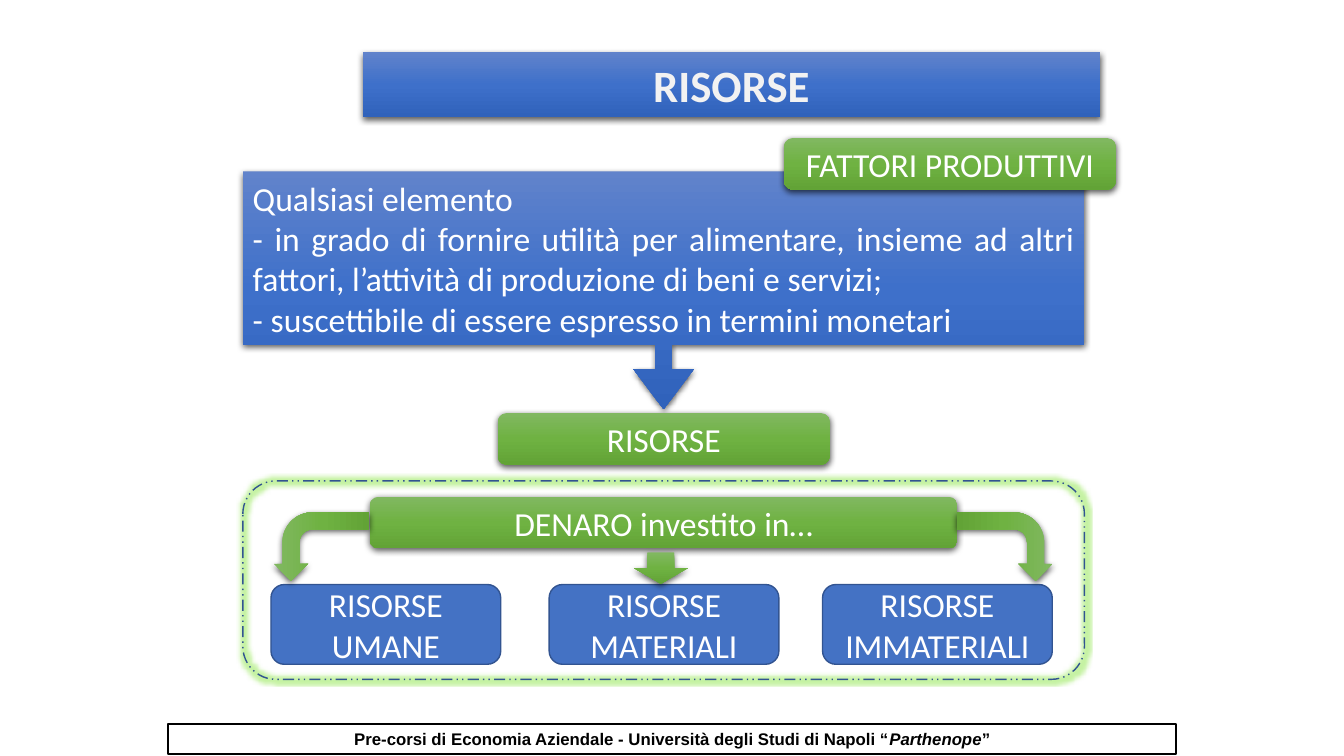
import pptx
import pptx.util
import pptx.dml.color
import pptx.enum.dml
import pptx.enum.shapes
import pptx.enum.text
import pptx.oxml
import pptx.oxml.ns
from lxml import etree

Cm, Pt = pptx.util.Cm, pptx.util.Pt
rgb = pptx.dml.color.RGBColor.from_string
qn = pptx.oxml.ns.qn
KIND = pptx.enum.shapes.MSO_SHAPE
ALIGN = pptx.enum.text.PP_ALIGN
NS = 'xmlns:a="http://schemas.openxmlformats.org/drawingml/2006/main"'

hues = {"white": "FFFFFF", "pale": "F2F2F2", "black": "000000",
        "blue": "4472C4", "edge": "325491", "glow": "70E01A"}
fades = {"blue": ["6183CB", "3E70CA", "3062BB"],
         "green": ["81B861", "6FB242", "62A336"]}

deck = pptx.Presentation()
deck.slide_width, deck.slide_height = Cm(33.87), Cm(19.05)
slide = deck.slides.add_slide(deck.slide_layouts[6])


def draw(kind, box, fade=None, fill=None, edge=None, width=1):
    """Add a shape: a faded one gets a soft shadow, others are flat."""
    shape = slide.shapes.add_shape(kind, *[Cm(n) for n in box])
    shape.shadow.inherit = False
    if edge:
        shape.line.color.rgb = rgb(hues[edge])
        shape.line.width = Pt(width)
    else:
        shape.line.fill.background()
    if fade:
        shape.fill.gradient()
        shape.fill.gradient_angle = 270
        props = shape.element.spPr
        stops = props.find(qn("a:gradFill")).find(qn("a:gsLst"))
        stops.clear()
        for spot, hue in zip((0, 50000, 100000), fades[fade]):
            stop = etree.SubElement(stops, qn("a:gs"), pos=str(spot))
            etree.SubElement(stop, qn("a:srgbClr"), val=hue)
        props.find(qn("a:effectLst")).append(pptx.oxml.parse_xml(
            f'<a:outerShdw {NS} blurRad="57150" dist="19050" dir="5400000" '
            f'algn="ctr" rotWithShape="0"><a:srgbClr val="{hues["black"]}">'
            '<a:alpha val="63000"/></a:srgbClr></a:outerShdw>'))
    elif fill:
        shape.fill.solid()
        shape.fill.fore_color.rgb = rgb(hues[fill])
    else:
        shape.fill.background()
    return shape


def write(shape, *lines, size=24, font="Calibri", hue="white", bold=False,
          align=ALIGN.CENTER, grow=False):
    """Fill a shape with lines; a line is a list of (text, italic) or a text."""
    frame = shape.text_frame
    frame.word_wrap = True
    frame.vertical_anchor = pptx.enum.text.MSO_ANCHOR.MIDDLE
    if grow:
        frame.vertical_anchor = pptx.enum.text.MSO_ANCHOR.TOP
        frame.auto_size = pptx.enum.text.MSO_AUTO_SIZE.SHAPE_TO_FIT_TEXT
    for i, line in enumerate(lines):
        para = frame.paragraphs[0] if i == 0 else frame.add_paragraph()
        para.alignment = align
        for text, slant in [(line, False)] if isinstance(line, str) else line:
            run = para.add_run()
            run.text = text
            run.font.size, run.font.name = Pt(size), font
            run.font.bold, run.font.italic = bold, slant
            run.font.color.rgb = rgb(hues[hue])


# Title
title = draw(KIND.RECTANGLE, (9.14, 1.32, 18.59, 1.63), fade="blue")
write(title, "RISORSE", size=32, hue="pale", bold=True, grow=True)

# Definition
note = draw(KIND.DOWN_ARROW_CALLOUT, (6.12, 4.32, 21.21, 5.99), fade="blue")
for i, part in enumerate((0.07, 0.127, 0.168, 0.73)):
    note.adjustments[i] = part
write(note, "Qualsiasi elemento",
      "- in grado di fornire utilità per alimentare, insieme ad altri "
      "fattori, l’attività di produzione di beni e servizi;",
      "- suscettibile di essere espresso in termini monetari",
      align=ALIGN.JUSTIFY)

# Green labels
for text, left, top, wide in (("DENARO investito in…", 9.32, 12.52, 14.81),
                              ("FATTORI PRODUTTIVI", 19.76, 3.48, 8.36),
                              ("RISORSE", 12.55, 10.41, 8.36)):
    label = draw(KIND.ROUNDED_RECTANGLE, (left, top, wide, 1.3), fade="green")
    write(label, text)

# Kinds of resource
for text, left in (("RISORSE UMANE", 6.83), ("RISORSE MATERIALI", 13.84),
                   ("RISORSE IMMATERIALI", 20.73)):
    card = draw(KIND.ROUNDED_RECTANGLE, (left, 14.73, 5.79, 2.01),
                fill="blue", edge="edge")
    write(card, text)

# Arrows from the money to each kind
draw(KIND.DOWN_ARROW, (15.98, 13.92, 1.35, 0.79), fade="green")
for left, turn in ((24.46, 90), (7.24, 270)):
    bend = draw(KIND.BENT_ARROW, (left, 12.57, 1.73, 2.41), fade="green")
    bend.rotation = turn
    if turn == 270:
        bend.element.spPr.find(qn("a:xfrm")).set("flipH", "1")

# Glowing dashed frame
ring = draw(KIND.ROUNDED_RECTANGLE, (6.12, 12.12, 21.21, 5), edge="edge")
ring.line.dash_style = pptx.enum.dml.MSO_LINE.DASH_DOT_DOT
ring.element.spPr.find(qn("a:effectLst")).append(pptx.oxml.parse_xml(
    f'<a:glow {NS} rad="63500"><a:srgbClr val="{hues["glow"]}">'
    '<a:alpha val="40000"/></a:srgbClr></a:glow>'))

# Footer
foot = draw(KIND.RECTANGLE, (4.24, 18.24, 25.4, 0.76), edge="black", width=1.5)
write(foot, [("Pre-corsi di Economia Aziendale - Università degli Studi di "
              "Napoli “", False), ("Parthenope", True), ("”", False)],
      size=12, font="Arial", hue="black", bold=True, grow=True)

deck.save("out.pptx")
